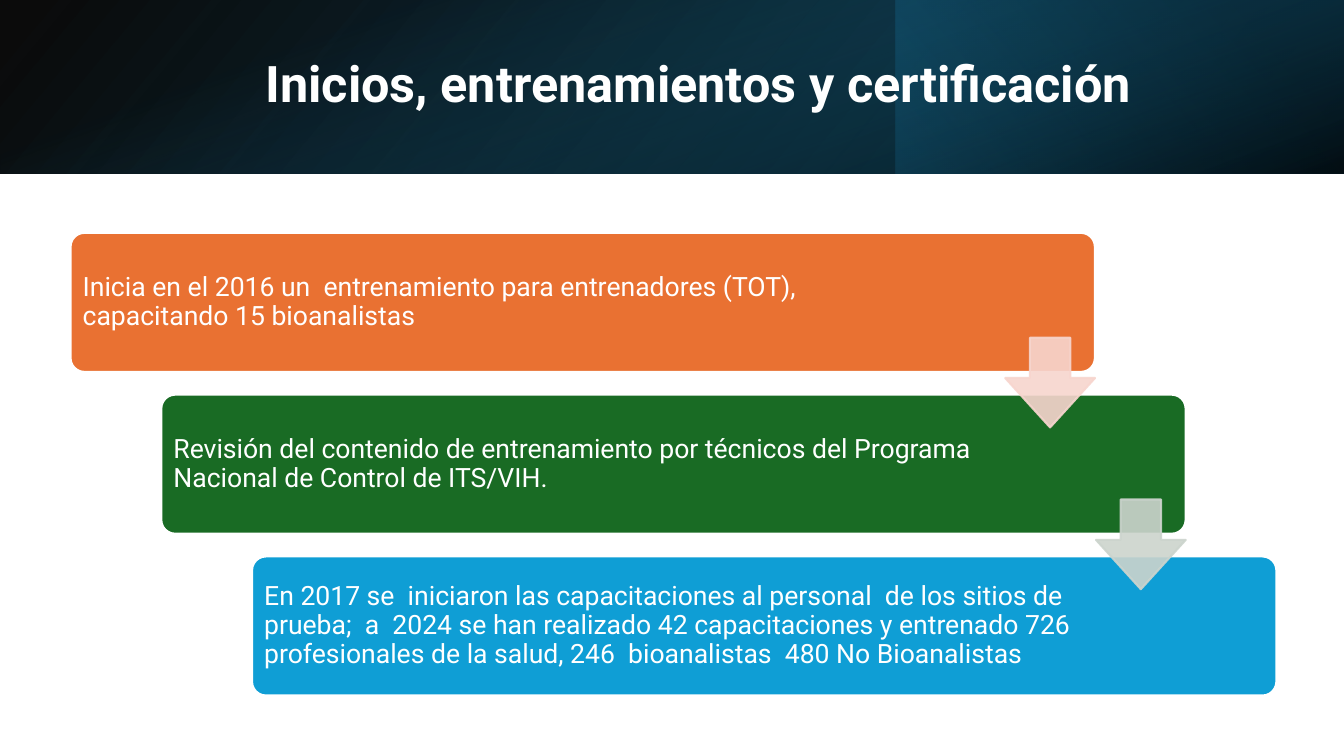
from pptx import Presentation
from pptx import util as u
from pptx.dml.color import RGBColor
from pptx.enum import shapes, text
from pptx.oxml import parse_xml
from pptx.oxml.ns import nsdecls, qn

FONT = "Roboto"
COLORS = {
    "white": "FFFFFF", "black": "000000", "navy": "104862", "deep": "0B3041",
    "teal": "156082", "orange": "E97132", "green": "196B24", "blue": "0F9ED5",
    "pink": "F7D5CE", "gray": "CCD4CD",
}
STEPS = [
    ("orange", "pink", "Inicia en el 2016 un  entrenamiento para entrenadores (TOT), "
     "capacitando 15 bioanalistas"),
    ("green", "gray", "Revisión del contenido de entrenamiento por técnicos del Programa "
     "Nacional de Control de ITS/VIH."),
    ("blue", None, "En 2017 se  iniciaron las capacitaciones al personal  de los sitios de "
     "prueba;  a  2024 se han realizado 42 capacitaciones y entrenado 726 "
     "profesionales de la salud, 246  bioanalistas  480 No Bioanalistas"),
]


def rgb(name):
    """Return the named colour."""
    return RGBColor.from_string(COLORS[name])


def add_shape(page, kind, left, top, width, height):
    """Add a preset shape without shadow, measured in inches."""
    shape = page.shapes.add_shape(kind, *map(u.Inches, (left, top, width, height)))
    shape.shadow.inherit = False
    return shape


def paint(shape, color, alpha=100):
    """Give a shape a flat fill and a 1.5 pt line."""
    shape.fill.solid()
    shape.fill.fore_color.rgb = rgb(color)
    return outline(shape, color, alpha)


def outline(shape, color, alpha=100):
    """Draw the line and apply the opacity to the shape's colours."""
    shape.line.color.rgb = rgb(color)
    shape.line.width = u.Pt(1.5)
    if alpha < 100:
        for node in shape.element.spPr.iter(qn("a:srgbClr")):
            node.append(parse_xml(f'<a:alpha {nsdecls("a")} val="{alpha * 1000}"/>'))


def add_gradient(page, box, angle, stops):
    """Add a borderless rectangle with a translucent linear gradient."""
    shape = add_shape(page, shapes.MSO_SHAPE.RECTANGLE, *box)
    shape.line.fill.background()
    shape.fill.gradient()
    marks = "".join(
        f'<a:gs pos="{place * 1000}"><a:srgbClr val="{COLORS[color]}">'
        f'<a:alpha val="{alpha * 1000}"/></a:srgbClr></a:gs>'
        for place, color, alpha in stops)
    fill = parse_xml(
        f'<a:gradFill {nsdecls("a")} rotWithShape="1"><a:gsLst>{marks}</a:gsLst>'
        f'<a:lin ang="{angle * 60000}" scaled="0"/></a:gradFill>')
    props = shape.element.spPr
    props.replace(props.find(qn("a:gradFill")), fill)
    return shape


def write(box, words, size, align, bold=False):
    """Fill a text shape with one white paragraph centred vertically."""
    frame = box.text_frame
    frame.text = words
    frame.word_wrap = True
    frame.auto_size = text.MSO_AUTO_SIZE.NONE
    frame.vertical_anchor = text.MSO_ANCHOR.MIDDLE
    para = frame.paragraphs[0]
    para.alignment = align
    para.line_spacing = 0.9
    font = para.runs[0].font
    font.name, font.size, font.bold = FONT, u.Pt(size), bold
    font.color.rgb = rgb("white")


def add_header(page, width, height):
    """Place the layered gradient band and the title over it."""
    band = add_gradient(page, (0, 0, width, height), 140,
                        [(0, "black", 96), (100, "navy", 100)])
    band.element.spPr.find(qn("a:xfrm")).set("flipH", "1")
    glow = add_gradient(page, (width * 2 / 3, 0, width / 3, height), 320,
                        [(19, "deep", 68), (100, "teal", 79)])
    glow.rotation = 180
    shade = add_gradient(
        page, ((width - height) / 2, (height - width) / 2, height, width), 340,
        [(23, "teal", 0), (99, "black", 74)])
    shade.rotation = 90

    title = page.shapes.title
    page.shapes.element.append(title.element)
    title.left, title.top = u.Inches(1.5), u.Inches(0.38)
    title.width, title.height = u.Inches(10.98), u.Inches(0.96)
    write(title, "Inicios, entrenamientos y certificación ", 36,
          text.PP_ALIGN.CENTER, bold=True)


def add_step(page, left, top, width, height, color, words):
    """Place one rounded card and its text."""
    card = add_shape(page, shapes.MSO_SHAPE.ROUNDED_RECTANGLE, left, top, width, height)
    card.adjustments[0] = 0.1
    paint(card, color)
    outline(card, "white")
    pad = 0.04
    label = page.shapes.add_textbox(
        *map(u.Inches, (left + pad, top + pad, 8.29, height - 2 * pad)))
    frame = label.text_frame
    frame.margin_left = frame.margin_right = u.Inches(0.08)
    frame.margin_top = frame.margin_bottom = u.Inches(0.08)
    write(label, words, 19, text.PP_ALIGN.LEFT)


def add_staircase(page, left, top):
    """Place the descending cards and the arrows that link them."""
    width, height, side = 10.16, 1.38, 0.89
    corners = [(left + 0.9 * i, top + 1.605 * i) for i in range(len(STEPS))]
    for (x, y), (color, _, words) in zip(corners, STEPS):
        add_step(page, x, y, width, height, color, words)
    for (x, y), (_, tint, _) in zip(corners, STEPS):
        if tint:
            arrow = add_shape(page, shapes.MSO_SHAPE.DOWN_ARROW,
                              x + width - side, y + 1.04, side, side)
            arrow.adjustments[0], arrow.adjustments[1] = 0.45, 0.55
            paint(arrow, tint, alpha=90)


def main():
    """Build the slide and save the deck."""
    deck = Presentation()
    deck.slide_width, deck.slide_height = u.Inches(13.33), u.Inches(7.5)
    page = deck.slides.add_slide(deck.slide_layouts[5])
    add_header(page, 13.33, 1.72)
    add_staircase(page, 0.7, 2.31)
    deck.save("out.pptx")


if __name__ == "__main__":
    main()
